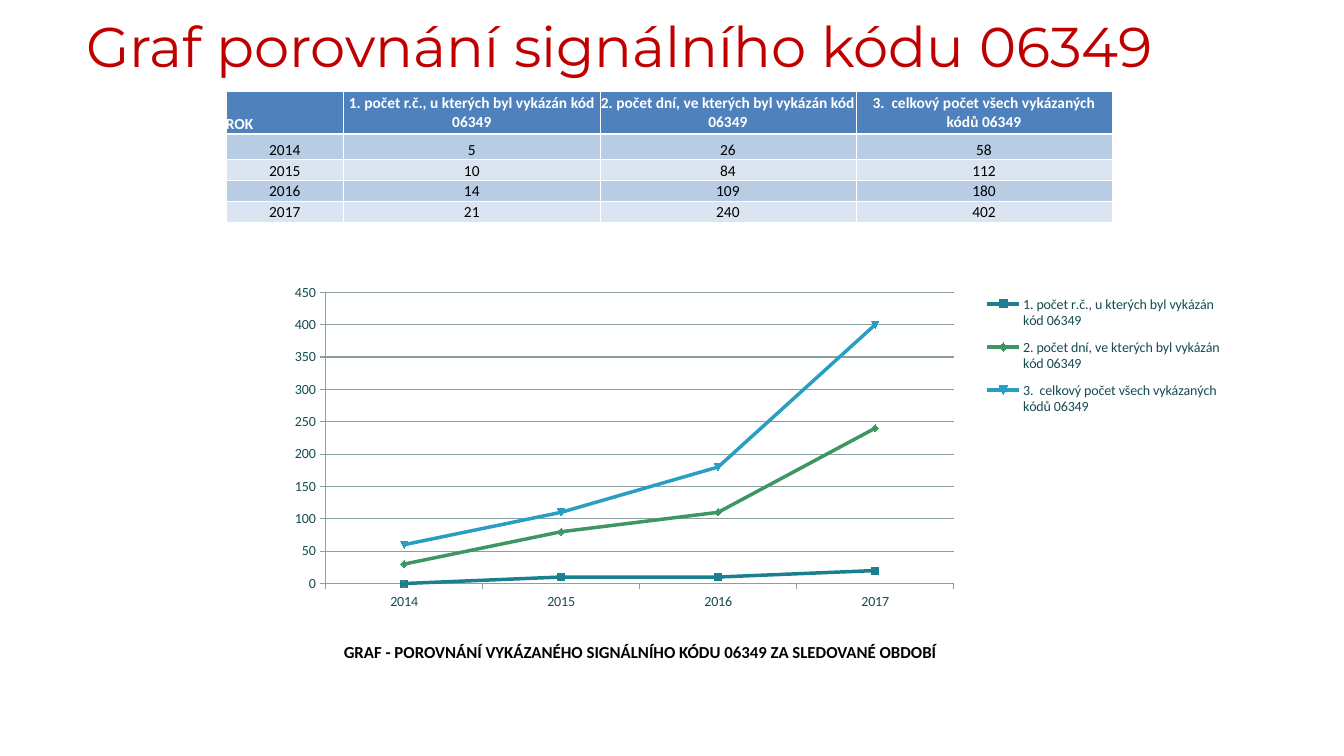
"""Build a slide comparing yearly counts of signal code 06349 in a table and a line chart."""
from dataclasses import dataclass
from typing import Any, Optional

import lxml.etree
import pptx
import pptx.chart.data
import pptx.dml.color
import pptx.enum.chart
import pptx.enum.text
import pptx.oxml.ns
import pptx.util

Inches = pptx.util.Inches
Pt = pptx.util.Pt
ANCHOR = pptx.enum.text.MSO_ANCHOR
ALIGN = pptx.enum.text.PP_ALIGN
qn = pptx.oxml.ns.qn

HEADERS = ["ROK", "1. počet r.č., u kterých byl vykázán kód 06349",
           "2. počet dní, ve kterých byl vykázán kód 06349",
           "3.  celkový počet všech vykázaných kódů 06349"]
YEARS = {"2014": [5, 26, 58], "2015": [10, 84, 112],
         "2016": [14, 109, 180], "2017": [21, 240, 402]}
CAPTION = "GRAF - POROVNÁNÍ VYKÁZANÉHO SIGNÁLNÍHO KÓDU 06349 ZA SLEDOVANÉ OBDOBÍ"
ROW_COUNT = 26
TABLE_HEIGHT, HEADER_HEIGHT, FIRST_YEAR_HEIGHT = 5.67, 0.42, 0.25
COLUMN_WIDTHS = [1.17, 2.54, 2.54, 2.54]
CHART_WIDTH, CHART_HEIGHT = 10.66, 3.45
BANDS = ["B8CCE4", "DBE5F1"]
SERIES_COLORS = ["1B91A1", "46AC6F", "37AFD5", "6786A9", "90A693", "389066", "1B91A1"]
INK, GRID = "164B4F", "8B9EA0"
BODY = {"name": "Calibri", "size": Pt(11), "bold": False}
STRONG = BODY | {"bold": True}


@dataclass
class CellLook:
    text: str
    font: dict[str, Any]
    color: str = "000000"
    fill: Optional[str] = None
    align: Optional[int] = ALIGN.CENTER
    anchor: int = ANCHOR.BOTTOM
    top: float = 0.5
    bottom: float = 0.5


def rgb(color: str) -> pptx.dml.color.RGBColor:
    return pptx.dml.color.RGBColor.from_string(color)


def apply(target: Any, values: dict[str, Any]) -> None:
    for name, value in values.items():
        setattr(target, name, value)


def style_font(font: Any, values: dict[str, Any], color: str) -> None:
    apply(font, values)
    font.color.rgb = rgb(color)


def add_title(page: Any) -> None:
    box = page.shapes.add_textbox(Inches(0.76), Inches(0.13), Inches(12.36), Inches(0.71))
    apply(box.text_frame, {"word_wrap": True, "vertical_anchor": ANCHOR.BOTTOM})
    para = box.text_frame.paragraphs[0]
    para.line_spacing = 0.9
    span = para.add_run()
    span.text = "Graf porovnání signálního kódu 06349"
    style_font(span.font, {"name": "Montserrat", "size": Pt(40)}, "C00000")


def add_border(cell: Any, side: str, width: float) -> None:
    properties = cell._tc.get_or_add_tcPr()
    line = lxml.etree.SubElement(properties, qn(f"a:{side}"), w=str(Pt(width)))
    fill = lxml.etree.SubElement(line, qn("a:solidFill"))
    lxml.etree.SubElement(fill, qn("a:srgbClr"), val="FFFFFF")


def style_cell(cell: Any, look: CellLook) -> None:
    apply(cell, {"margin_left": 0, "margin_right": 0, "margin_top": 0,
                 "margin_bottom": 0, "vertical_anchor": look.anchor})
    para = cell.text_frame.paragraphs[0]
    para.alignment = look.align
    if look.text:
        span = para.add_run()
        span.text = look.text
        style_font(span.font, look.font, look.color)
    else:
        lxml.etree.SubElement(para._p, qn("a:endParaRPr"), sz="1100")
    if look.fill:
        for side, width in {"lnL": 0.5, "lnR": 0.5, "lnT": look.top, "lnB": look.bottom}.items():
            add_border(cell, side, width)
        cell.fill.solid()
        cell.fill.fore_color.rgb = rgb(look.fill)
    else:
        cell.fill.background()


def cell_look(row: int, column: int) -> CellLook:
    if row == 0:
        first = column == 0
        return CellLook(HEADERS[column], STRONG, "FFFFFF", "4F81BD",
                        None if first else ALIGN.CENTER,
                        ANCHOR.BOTTOM if first else ANCHOR.MIDDLE, bottom=1.5)
    if row <= len(YEARS):
        year, counts = list(YEARS.items())[row - 1]
        return CellLook(str([year, *counts][column]), BODY, fill=BANDS[(row - 1) % 2],
                        top=1.5 if row == 1 else 0.5)
    caption = CAPTION if (row, column) == (ROW_COUNT - 1, 1) else ""
    return CellLook(caption, STRONG | {"size": Pt(12)}, align=None)


def add_counts_table(page: Any) -> None:
    table = page.shapes.add_table(ROW_COUNT, len(HEADERS), Inches(2.24), Inches(0.91),
                                  Inches(sum(COLUMN_WIDTHS)), Inches(TABLE_HEIGHT)).table
    apply(table, {"first_row": False, "horz_banding": False})
    for column, width in zip(table.columns, COLUMN_WIDTHS):
        column.width = Inches(width)
    plain = (TABLE_HEIGHT - HEADER_HEIGHT - FIRST_YEAR_HEIGHT) / (ROW_COUNT - 2)
    heights = [HEADER_HEIGHT, FIRST_YEAR_HEIGHT] + [plain] * (ROW_COUNT - 2)
    for row, height in enumerate(heights):
        table.rows[row].height = Inches(height)
        for column in range(len(HEADERS)):
            style_cell(table.cell(row, column), cell_look(row, column))
    table.cell(ROW_COUNT - 1, 1).merge(table.cell(ROW_COUNT - 1, 3))


def make_layout(left: float, top: float, width: float, height: float, inner: bool = False) -> Any:
    layout = lxml.etree.Element(qn("c:layout"))
    manual = lxml.etree.SubElement(layout, qn("c:manualLayout"))
    values = {"layoutTarget": "inner"} if inner else {}
    values |= {"xMode": "edge", "yMode": "edge", "x": left / CHART_WIDTH,
               "y": top / CHART_HEIGHT, "w": width / CHART_WIDTH, "h": height / CHART_HEIGHT}
    for name, value in values.items():
        lxml.etree.SubElement(manual, qn(f"c:{name}"), val=str(value))
    return layout


def replace_layout(parent: Any, layout: Any, position: int) -> None:
    for old in parent.findall(qn("c:layout")):
        parent.remove(old)
    parent.insert(position, layout)


def add_legend(chart: Any) -> None:
    chart.has_legend = True
    apply(chart.legend, {"position": pptx.enum.chart.XL_LEGEND_POSITION.RIGHT,
                         "include_in_layout": False})
    element = chart.legend._element
    position = element.index(element.find(qn("c:legendPos"))) + 1
    replace_layout(element, make_layout(8.18, 0.1, 2.45, 1.4), position)
    for index in range(len(HEADERS) - 1, len(SERIES_COLORS)):
        entry = lxml.etree.Element(qn("c:legendEntry"))
        lxml.etree.SubElement(entry, qn("c:idx"), val=str(index))
        lxml.etree.SubElement(entry, qn("c:delete"), val="1")
        element.insert(position, entry)
        position += 1


def add_counts_chart(page: Any) -> None:
    data = pptx.chart.data.CategoryChartData()
    data.categories = list(YEARS)
    for name, counts in zip(HEADERS[1:], zip(*YEARS.values())):
        data.add_series(name, [round(count, -1) for count in counts])
    for number in range(len(HEADERS), len(SERIES_COLORS) + 1):
        data.add_series(f"Series {number}", [0])
    chart = page.shapes.add_chart(pptx.enum.chart.XL_CHART_TYPE.LINE_MARKERS,
                                  Inches(1.54), Inches(2.73), Inches(CHART_WIDTH),
                                  Inches(CHART_HEIGHT), data).chart
    chart.has_title = False
    style_font(chart.font, {"name": "Calibri", "size": Pt(10)}, INK)
    chart.plots[0].vary_by_categories = False
    for series, color in zip(chart.plots[0].series, SERIES_COLORS):
        series.smooth = False
        series.format.line.width = Pt(2.5)
        series.marker.format.fill.solid()
        for shade in (series.format.line.color, series.marker.format.fill.fore_color):
            shade.rgb = rgb(color)
            shade.brightness = -0.12
    apply(chart.value_axis, {"minimum_scale": 0, "maximum_scale": 450, "major_unit": 50,
                             "has_major_gridlines": True})
    for axis in (chart.category_axis, chart.value_axis):
        axis.major_tick_mark = pptx.enum.chart.XL_TICK_MARK.OUTSIDE
    for lined in (chart.category_axis, chart.value_axis, chart.value_axis.major_gridlines):
        lined.format.line.width = Pt(0.75)
        lined.format.line.color.rgb = rgb(GRID)
    plot_area = chart._chartSpace.chart.plotArea
    replace_layout(plot_area, make_layout(1.69, 0.17, 6.23, 2.89, True), 0)
    add_legend(chart)


def main() -> None:
    deck = pptx.Presentation()
    apply(deck, {"slide_width": Inches(13.33), "slide_height": Inches(7.5)})
    page = deck.slides.add_slide(deck.slide_layouts[6])
    add_title(page)
    add_counts_table(page)
    add_counts_chart(page)
    deck.save("out.pptx")


if __name__ == "__main__":
    main()
